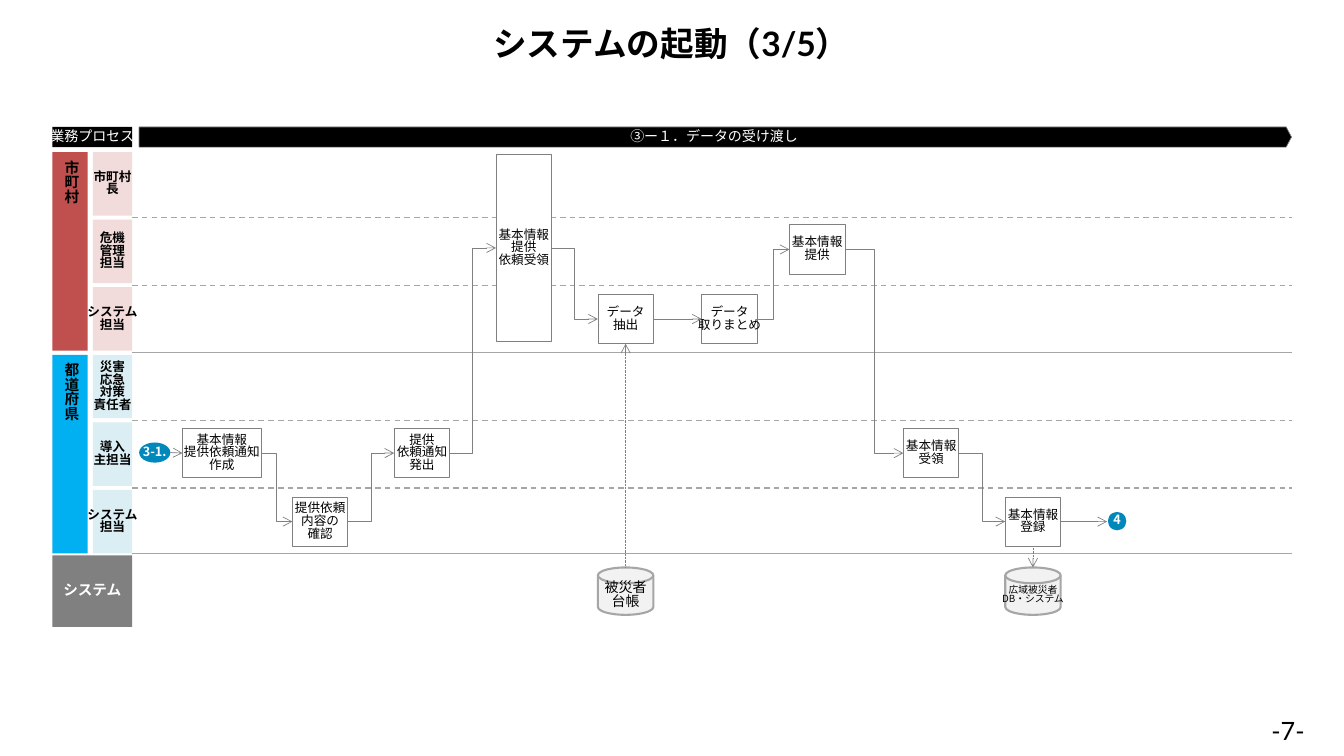
"""Builds a swimlane slide for the data hand-over process."""
from lxml import etree
from pptx import Presentation
from pptx import util as u
from pptx.dml.color import RGBColor
from pptx.enum import dml, shapes, text
from pptx.oxml import ns

TITLE = "システムの起動（3/5）"
PAGE = "-7-"
CORNER = "業務プロセス"
PHASE = "③ー１．データの受け渡し"
SYSTEM = "システム"
GROUPS = [
    ("市町村", "city", ["市町村\n長", "危機\v管理\n担当", "システム\n担当"]),
    ("都道府県", "pref", ["災害\v応急\v対策\v責任者", "導入\n主担当", "システム\n担当"]),
]
STEPS = {
    "draft": ("基本情報\n提供依頼通知\n作成", 1.81, 4.25, 0.78, 0.49),
    "check": ("提供依頼\n内容の\n確認", 2.9, 4.93, 0.55, 0.49),
    "issue": ("提供\n依頼通知\n発出", 3.91, 4.25, 0.55, 0.49),
    "accept": ("基本情報\n提供\n依頼受領", 4.92, 1.53, 0.55, 1.86),
    "extract": ("データ\n抽出", 5.93, 2.92, 0.55, 0.49),
    "compile": ("データ\n取りまとめ", 6.96, 2.92, 0.55, 0.49),
    "provide": ("基本情報\n提供", 7.83, 2.23, 0.55, 0.49),
    "receive": ("基本情報\n受領", 8.96, 4.25, 0.55, 0.49),
    "register": ("基本情報\n登録", 9.97, 4.93, 0.55, 0.49),
}
STORES = {
    "ledger": ("被災者\n台帳", 5.93, 5.63, 0.55, 0.47, 10),
    "database": ("広域被災者\vDB・システム", 9.97, 5.63, 0.55, 0.47, 7),
}
MARKERS = {
    "entry": ("3-1.", 1.38, 4.39, 0.31, 0.2, None),
    "exit": ("4", 10.98, 5.07, 0.2, 0.2, "white"),
}
FLOW = ["entry", "draft", "check", "issue", "accept", "extract",
        "compile", "provide", "receive", "register", "exit"]
DATA_LINKS = [("ledger", "extract", 0, 2), ("register", "database", 2, 0)]

THEME = {
    "latin": "Lato", "cjk": "Noto Sans CJK JP",
    "black": "000000", "white": "FFFFFF", "grey": "808080", "rule": "A6A6A6",
    "city": "C0504D", "city_lane": "F2DCDB", "pref": "00B0F0", "pref_lane": "DBEEF4",
    "marker": "0088BB", "store": "F2F2F2",
    "title_size": 24, "page_size": 18, "band_size": 10, "group_size": 10.5, "size": 9,
}
LEFT, LANE_LEFT, RULE_LEFT, RIGHT = 0.52, 0.92, 1.31, 12.81
LANE_TOP, LANE_HEIGHT, LANE_PITCH = 1.51, 0.63, 0.67
RULES = [2.16 + LANE_PITCH * row for row in range(5)] + [5.49]
TIGHT = {"margin_left": 0, "margin_right": 0}
DOT = dict.fromkeys(["margin_left", "margin_right", "margin_top", "margin_bottom"], 0.03)
FLUSH = dict.fromkeys(DOT, 0)
Kind = shapes.MSO_SHAPE


def rgb(key):
    return RGBColor.from_string(THEME[key])


def write(frame, words, size, color="black", bold=False, face="cjk", spacing=None, margins=None,
          wrap=False):
    frame.text = words
    frame.auto_size = text.MSO_AUTO_SIZE.NONE
    frame.word_wrap = wrap
    frame.vertical_anchor = text.MSO_ANCHOR.MIDDLE
    for side, inches in (margins or {}).items():
        setattr(frame, side, u.Inches(inches))
    for paragraph in frame.paragraphs:
        paragraph.alignment = text.PP_ALIGN.CENTER
        paragraph.line_spacing = spacing
        for run in paragraph.runs:
            style = {"size": u.Pt(size), "bold": bold, "name": THEME[face]}
            for field, value in style.items():
                setattr(run.font, field, value)
            run.font.color.rgb = rgb(color)
            east = etree.SubElement(run.font._element, ns.qn("a:ea"))
            east.set("typeface", THEME["cjk"])


def block(slide, kind, words, box, fill, line=None, width=0.5, size=THEME["size"],
          margins=None, **style):
    shape = slide.shapes.add_shape(kind, *map(u.Inches, box))
    shape.shadow.inherit = False
    shape.fill.solid()
    shape.fill.fore_color.rgb = rgb(fill)
    if line:
        shape.line.color.rgb = rgb(line)
        shape.line.width = u.Pt(width)
    else:
        shape.line.fill.background()
    edges = {**TIGHT, "margin_top": 0.08, "margin_bottom": 0.08}
    write(shape.text_frame, words, size, spacing=0.83, margins=margins or edges, **style)
    return shape


def connect(slide, start, end, color, width, dash=None, arrow=False):
    straight = start[0] == end[0] or abs(start[1] - end[1]) < u.Inches(0.02)
    kind = shapes.MSO_CONNECTOR.STRAIGHT if straight else shapes.MSO_CONNECTOR.ELBOW
    link = slide.shapes.add_connector(kind, *start, end[0], start[1] if straight and
                                      start[0] != end[0] else end[1])
    link.line.color.rgb = rgb(color)
    link.line.width = u.Pt(width)
    if dash:
        link.line.dash_style = dash
    if arrow:
        tip = etree.SubElement(link.line._get_or_add_ln(), ns.qn("a:tailEnd"))
        tip.set("type", "arrow")
    etree.SubElement(link._element.spPr, ns.qn("a:effectLst"))
    return link


def side_point(shape, side):
    middle, center = shape.left + shape.width // 2, shape.top + shape.height // 2
    return [(middle, shape.top), (shape.left, center),
            (middle, shape.top + shape.height), (shape.left + shape.width, center)][side]


def join(slide, start, end, leave=3, arrive=1, dash=None):
    link = connect(slide, side_point(start, leave), side_point(end, arrive),
                   "grey", 0.5, dash, arrow=True)
    if start.auto_shape_type == Kind.RECTANGLE:
        link.begin_connect(start, leave)
    if end.auto_shape_type == Kind.RECTANGLE:
        link.end_connect(end, arrive)


def add_heading(slide):
    title = slide.shapes.title
    for field, inches in {"left": LEFT, "top": 0.18, "width": 12.28, "height": 0.5}.items():
        setattr(title, field, u.Inches(inches))
    write(title.text_frame, TITLE, THEME["title_size"], bold=True, face="latin", wrap=True)
    page = slide.shapes.add_textbox(*map(u.Inches, (12.34, 7.05, 0.87, 0.4)))
    write(page.text_frame, PAGE, THEME["page_size"], face="latin", wrap=True)


def add_lanes(slide):
    band = {"size": THEME["band_size"], "color": "white"}
    block(slide, Kind.RECTANGLE, CORNER, (LEFT, 1.26, 0.79, 0.2), "black",
          margins=TIGHT, **band)
    phase = block(slide, Kind.PENTAGON, PHASE, (1.38, 1.26, RIGHT - 1.38, 0.2), "black",
                  "grey", wrap=True, margins=TIGHT, **band)
    phase.adjustments[0] = 0.264
    for row, height in enumerate(RULES):
        dash = None if row % 3 == 2 else dml.MSO_LINE.DASH
        connect(slide, (u.Inches(RULE_LEFT), u.Inches(height)),
                (u.Inches(RIGHT), u.Inches(height)), "rule", 1, dash)
    for index, (group, fill, lanes) in enumerate(GROUPS):
        top = LANE_TOP + index * len(lanes) * LANE_PITCH
        side = block(slide, Kind.RECTANGLE, group, (LEFT, top, 0.35, 1.97), fill,
                     size=THEME["group_size"], bold=True)
        side.text_frame._txBody.bodyPr.set("vert", "eaVert")
        for row, lane in enumerate(lanes):
            block(slide, Kind.RECTANGLE, lane,
                  (LANE_LEFT, top + row * LANE_PITCH, 0.39, LANE_HEIGHT),
                  fill + "_lane", bold=True)
    block(slide, Kind.RECTANGLE, SYSTEM, (LEFT, 5.51, 0.79, 0.71), "grey",
          size=THEME["group_size"], color="white", bold=True)


def add_process(slide):
    nodes = {}
    for key, (words, *box) in STEPS.items():
        nodes[key] = block(slide, Kind.RECTANGLE, words, box, "white", "grey")
    for key, (words, *box, size) in STORES.items():
        nodes[key] = block(slide, Kind.FLOWCHART_MAGNETIC_DISK, words, box, "store",
                           "rule", 1.5, size, FLUSH)
    for key, (words, *box, line) in MARKERS.items():
        nodes[key] = block(slide, Kind.OVAL, words, box, "marker", line, 1,
                           margins=DOT, color="white", bold=True)
    for start, end in zip(FLOW, FLOW[1:]):
        join(slide, nodes[start], nodes[end])
    for start, end, leave, arrive in DATA_LINKS:
        join(slide, nodes[start], nodes[end], leave, arrive, dml.MSO_LINE.ROUND_DOT)


def main():
    deck = Presentation()
    deck.slide_width, deck.slide_height = u.Inches(13.33), u.Inches(7.5)
    slide = deck.slides.add_slide(deck.slide_layouts[5])
    add_heading(slide)
    add_lanes(slide)
    add_process(slide)
    deck.save("out.pptx")


if __name__ == "__main__":
    main()
